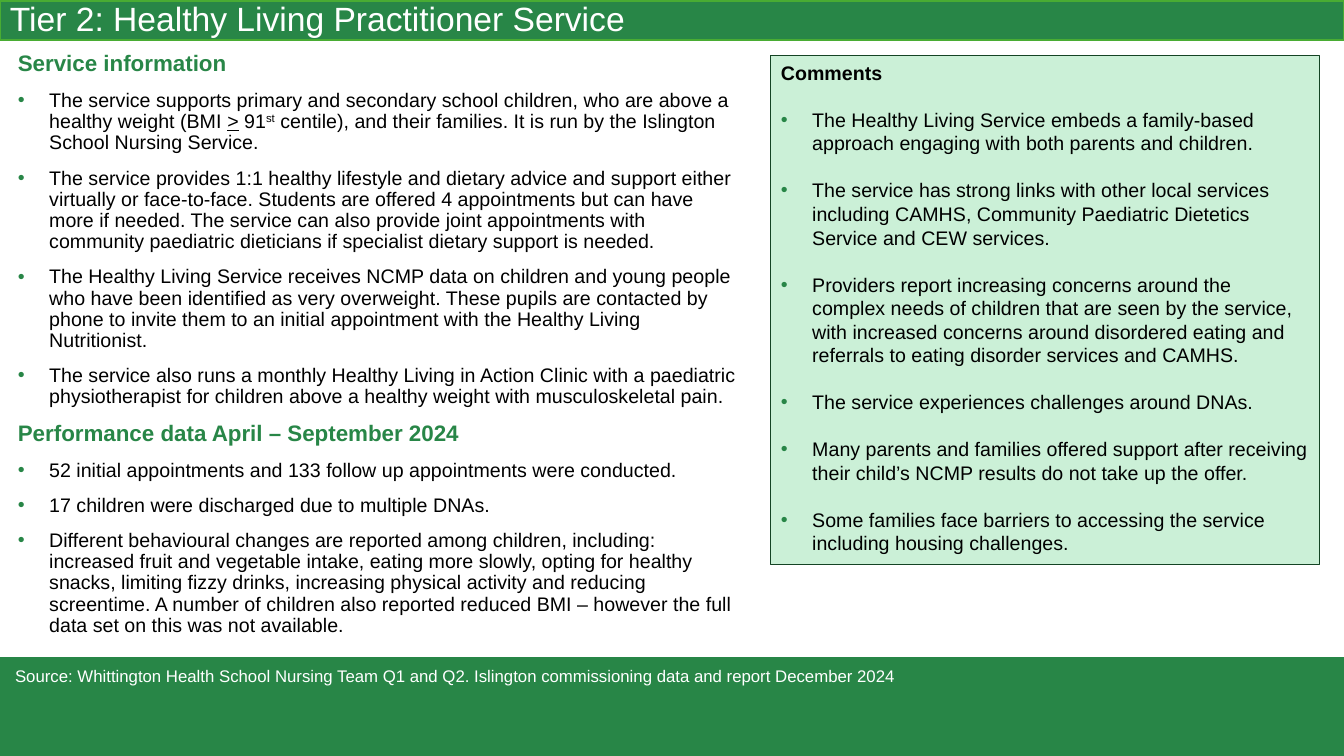
from lxml import etree
from pptx import Presentation
from pptx.dml.color import RGBColor
from pptx.enum.shapes import MSO_SHAPE
from pptx.enum.text import MSO_ANCHOR, MSO_AUTO_SIZE, PP_ALIGN
from pptx.oxml.ns import qn
from pptx.util import Cm, Pt

RECT = MSO_SHAPE.RECTANGLE
TOP, MIDDLE = MSO_ANCHOR.TOP, MSO_ANCHOR.MIDDLE
LEFT = PP_ALIGN.LEFT
NO_FIT = MSO_AUTO_SIZE.NONE

COLOURS = {
    "green": "288647",
    "lime": "49AC33",
    "mint": "CBF0D7",
    "forest": "144324",
    "white": "FFFFFF",
    "black": "000000",
}

SERVICE = [
    [("The service supports primary and secondary school children, who are above "
      "a healthy weight (BMI ", {}), (">", {"underline": True}), (" 91", {}),
     ("st", {"raised": True}),
     (" centile), and their families. It is run by the Islington School Nursing "
      "Service.", {})],
    "The service provides 1:1 healthy lifestyle and dietary advice and support either "
    "virtually or face-to-face. Students are offered 4 appointments but can have more "
    "if needed. The service can also provide joint appointments with community "
    "paediatric dieticians if specialist dietary support is needed.",
    "The Healthy Living Service receives NCMP data on children and young people who "
    "have been identified as very overweight. These pupils are contacted by phone to "
    "invite them to an initial appointment with the Healthy Living Nutritionist.",
    "The service also runs a monthly Healthy Living in Action Clinic with a paediatric "
    "physiotherapist for children above a healthy weight with musculoskeletal pain.",
]
PERFORMANCE = [
    "52 initial appointments and 133 follow up appointments were conducted.",
    "17 children were discharged due to multiple DNAs.",
    "Different behavioural changes are reported among children, including: increased "
    "fruit and vegetable intake, eating more slowly, opting for healthy snacks, "
    "limiting fizzy drinks, increasing physical activity and reducing screentime. A "
    "number of children also reported reduced BMI – however the full data set on this "
    "was not available.",
]
COMMENTS = [
    "The Healthy Living Service embeds a family-based approach engaging with both "
    "parents and children.",
    "The service has strong links with other local services including CAMHS, Community "
    "Paediatric Dietetics Service and CEW services.",
    "Providers report increasing concerns around the complex needs of children that "
    "are seen by the service, with increased concerns around disordered eating and "
    "referrals to eating disorder services and CAMHS.",
    "The service experiences challenges around DNAs.",
    "Many parents and families offered support after receiving their child’s NCMP "
    "results do not take up the offer.",
    "Some families face barriers to accessing the service including housing challenges.",
]


def rgb(name):
    return RGBColor.from_string(COLOURS[name])


def write(tf, text, size=14, colour="black", bold=False, bullet=False,
          before=0, after=0, spacing=1.0):
    """Add a paragraph; text is a string or a list of (text, format) runs."""
    p = tf.paragraphs[0]
    if p.runs:
        p = tf.add_paragraph()
    p.alignment = LEFT
    p.line_spacing = spacing
    p.space_before, p.space_after = Pt(before), Pt(after)
    pPr = p._p.get_or_add_pPr()
    indent = Cm(0.79) if bullet else 0
    pPr.set("marL", str(indent))
    pPr.set("indent", str(-indent))
    if bullet:
        clr = etree.SubElement(pPr, qn("a:buClr"))
        etree.SubElement(clr, qn("a:srgbClr"), val=COLOURS["green"])
        etree.SubElement(pPr, qn("a:buFont"), typeface="Arial")
        etree.SubElement(pPr, qn("a:buChar"), char="•")
    else:
        etree.SubElement(pPr, qn("a:buNone"))
    for part, fmt in [(text, {})] if isinstance(text, str) else text:
        r = p.add_run()
        r.text = part
        r.font.name, r.font.size, r.font.bold = "Arial", Pt(size), bold
        r.font.color.rgb = rgb(colour)
        if fmt.get("underline"):
            r.font.underline = True
        if fmt.get("raised"):
            r.font._element.set("baseline", "30000")


class Deck:
    def __init__(self, width, height):
        self.prs = Presentation()
        self.prs.slide_width, self.prs.slide_height = Cm(width), Cm(height)
        self.s = self.prs.slides.add_slide(self.prs.slide_layouts[1])

    def paint(self, sp, fill, line=None, weight=0.75):
        sp.fill.solid()
        sp.fill.fore_color.rgb = rgb(fill)
        if line:
            sp.line.color.rgb = rgb(line)
            sp.line.width = Pt(weight)
        else:
            sp.line.fill.background()

    def frame(self, sp, anchor=TOP, insets=(0.25, 0.13, 0.25, 0.13)):
        tf = sp.text_frame
        tf.word_wrap, tf.auto_size, tf.vertical_anchor = True, NO_FIT, anchor
        (tf.margin_left, tf.margin_top,
         tf.margin_right, tf.margin_bottom) = map(Cm, insets)
        return tf

    def placeholder(self, idx, x, y, w, h):
        sp = self.s.placeholders[idx]
        sp.left, sp.top, sp.width, sp.height = Cm(x), Cm(y), Cm(w), Cm(h)
        return sp

    def box(self, x, y, w, h, fill, line=None):
        sp = self.s.shapes.add_shape(RECT, Cm(x), Cm(y), Cm(w), Cm(h))
        sp.shadow.inherit = False
        self.paint(sp, fill, line)
        return sp

    def label(self, x, y, w, h):
        sp = self.s.shapes.add_textbox(Cm(x), Cm(y), Cm(w), Cm(h))
        return self.frame(sp, insets=(0, 0, 0, 0))


def main():
    deck = Deck(33.87, 19.05)

    # Title bar
    title = deck.placeholder(0, 0, 0.02, 33.87, 1)
    deck.paint(title, "green", "lime", 1.5)
    write(deck.frame(title, MIDDLE, (0.25, 0, 0, 0)),
          "Tier 2: Healthy Living Practitioner Service",
          size=24, colour="white", spacing=0.9)

    # Service information and performance data
    tf = deck.frame(deck.placeholder(1, 0.2, 1.19, 18.67, 15.04))
    sections = {"Service information": SERVICE,
                "Performance data April – September 2024": PERFORMANCE}
    for i, (heading, items) in enumerate(sections.items()):
        write(tf, heading, size=16, colour="green", bold=True,
              before=10 if i else 0, spacing=0.9)
        for item in items:
            write(tf, item, bullet=True, before=10, spacing=0.9)

    # Comments panel
    tf = deck.frame(deck.box(19.43, 1.4, 13.82, 12.83, "mint", "forest"))
    write(tf, "Comments", bold=True)
    for comment in COMMENTS:
        write(tf, comment, bullet=True, before=16.8)

    # Footer band with source
    deck.box(0, 16.56, 33.87, 2.49, "green")
    write(deck.label(0.38, 16.69, 23, 0.56),
          "Source: Whittington Health School Nursing Team Q1 and Q2. "
          "Islington commissioning data and report December 2024",
          size=12, colour="white", after=10, spacing=1.15)

    deck.prs.save("out.pptx")


if __name__ == "__main__":
    main()
